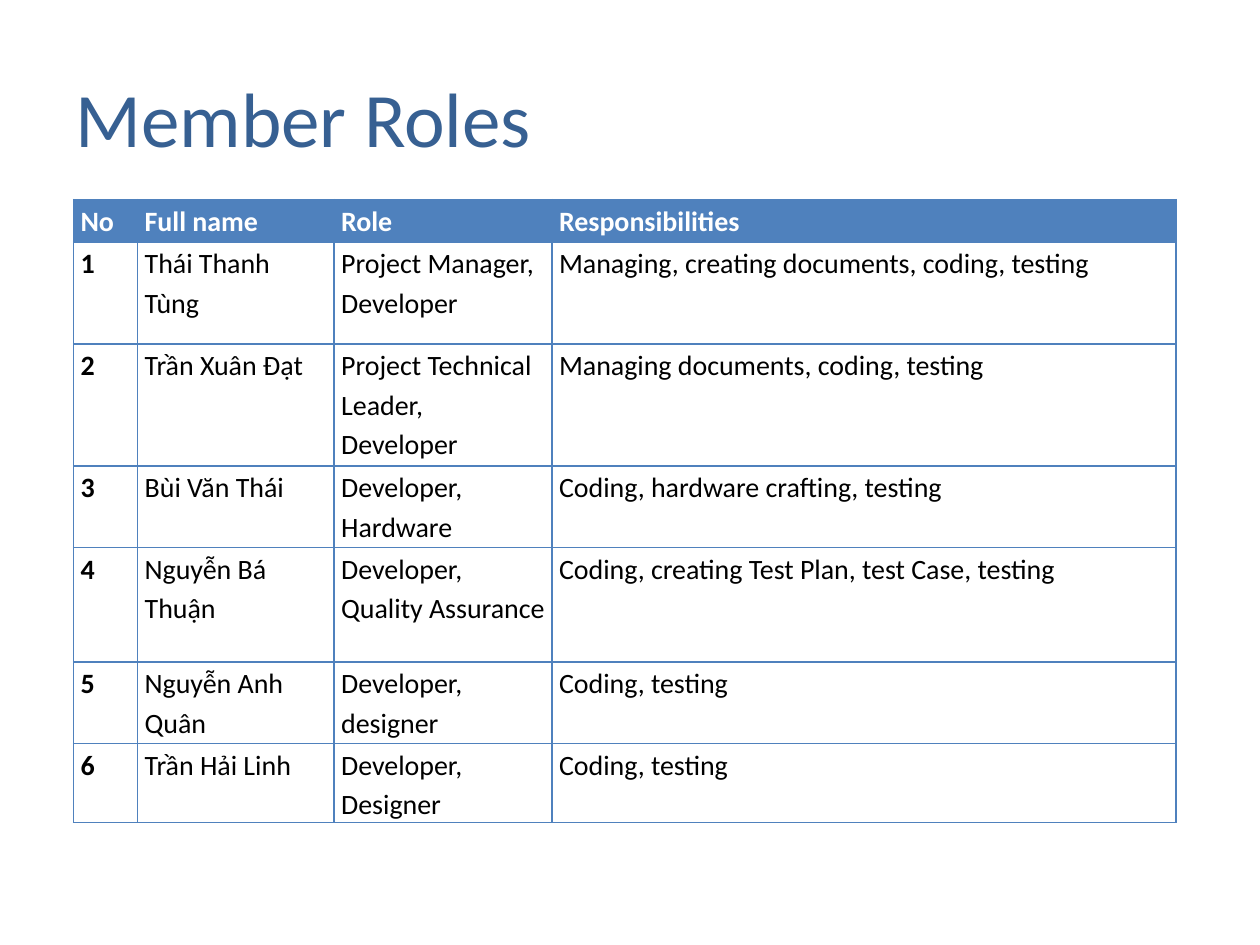
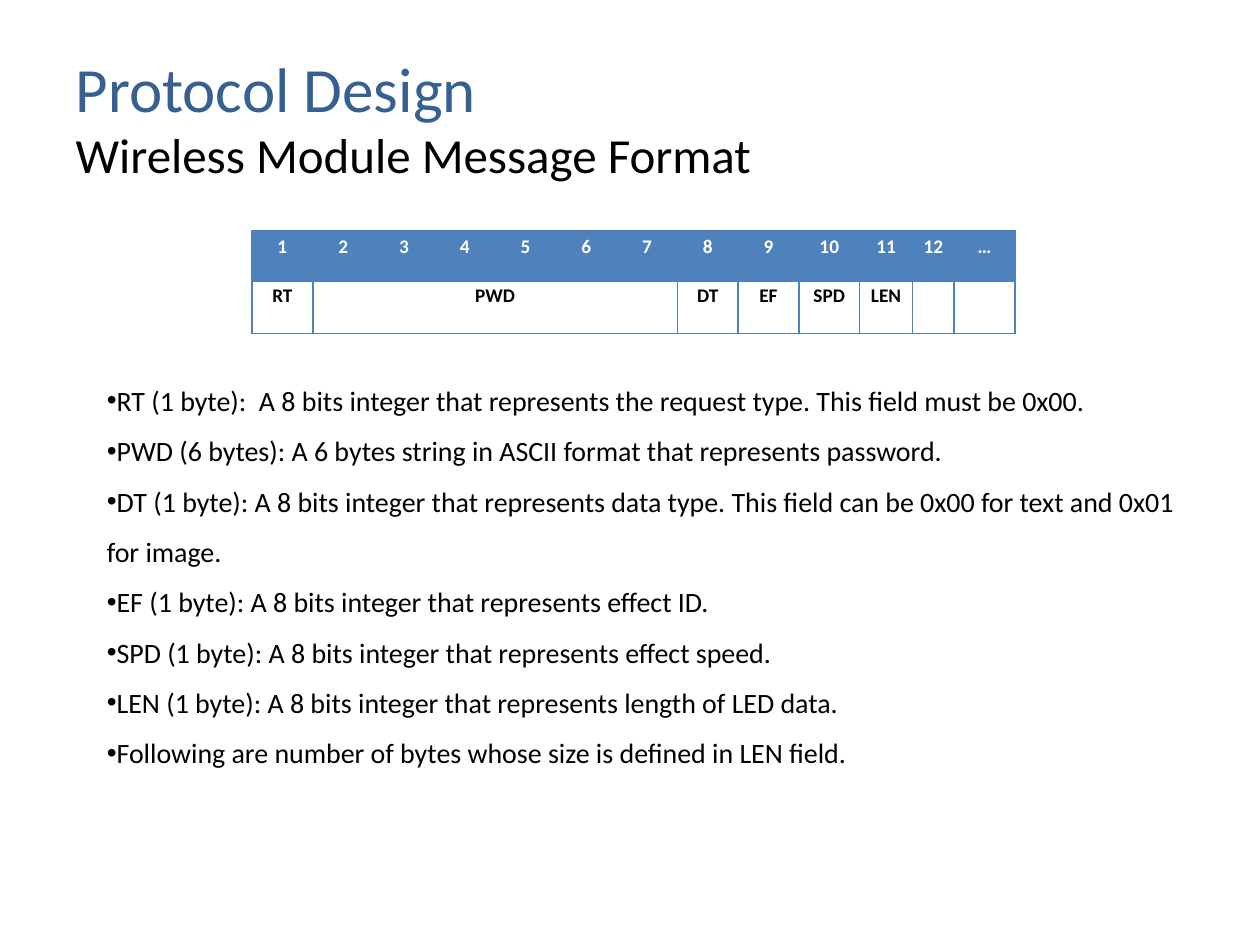
"""Build two project slides: the member roles and the wireless message format."""
from lxml import etree
from pptx import Presentation
from pptx import util as u
from pptx.dml import color
from pptx.enum import text
from pptx.oxml import ns

COLORS = {"title": "376092", "accent": "4F81BD", "ink": "000000", "paper": "FFFFFF"}
FONT = "Calibri"
TITLE_ONLY = 5
TITLE_BOX = (36, 21.6, 648, 90)

ROLE_COLUMNS = [36.7, 112.3, 124.5, 356.5]
ROLE_ROWS = [24.4, 58.2, 69.7, 46.6, 65.5, 46.6, 45.2]
ROLES = [
    ["No", "Full name", "Role", "Responsibilities"],
    ["1", "Thái Thanh Tùng", "Project Manager, Developer",
     "Managing, creating documents, coding, testing"],
    ["2", "Trần Xuân Đạt", "Project Technical Leader, Developer",
     "Managing documents, coding, testing"],
    ["3", "Bùi Văn Thái", "Developer, Hardware", "Coding, hardware crafting, testing"],
    ["4", "Nguyễn Bá Thuận", "Developer, Quality Assurance",
     "Coding, creating Test Plan, test Case, testing"],
    ["5", "Nguyễn Anh Quân", "Developer, designer", "Coding, testing"],
    ["6", "Trần Hải Linh", "Developer, Designer", "Coding, testing"],
]

BYTE_COLUMNS = [34.75] * 10 + [30.2, 23.8, 34.75]
BYTE_ROWS = [28.5, 30.2]
MESSAGE = [
    [str(number) for number in range(1, 13)] + ["…"],
    ["RT", "PWD"] + [""] * 5 + ["DT", "EF", "SPD", "LEN", "", ""],
]
PASSWORD_BYTES = (1, 6)

FIELDS = [
    "RT (1 byte):  A 8 bits integer that represents the request type. This field must be 0x00.",
    "PWD (6 bytes): A 6 bytes string in ASCII format that represents password.",
    "DT (1 byte): A 8 bits integer that represents data type. "
    "This field can be 0x00 for text and 0x01 for image.",
    "EF (1 byte): A 8 bits integer that represents effect ID.",
    "SPD (1 byte): A 8 bits integer that represents effect speed.",
    "LEN (1 byte): A 8 bits integer that represents length of LED data.",
    "Following are number of bytes whose size is defined in LEN field.",
]


def assign(target, values):
    """Set every attribute named in values on the target."""
    for name, value in values.items():
        setattr(target, name, value)


def points(lengths):
    """Convert plain numbers to point lengths."""
    return [u.Pt(length) for length in lengths]


def add_run(paragraph, content, size, ink, bold=False):
    """Append one formatted run to a paragraph."""
    run = paragraph.add_run()
    run.text = content
    assign(run.font, {"name": FONT, "size": u.Pt(size), "bold": bold})
    run.font.color.rgb = color.RGBColor.from_string(COLORS[ink])


def add_titled_slide(presentation, heading, size, subheading=None):
    """Add a slide with a left-aligned title and an optional second line."""
    slide = presentation.slides.add_slide(presentation.slide_layouts[TITLE_ONLY])
    title = slide.shapes.title
    assign(title, dict(zip(("left", "top", "width", "height"), points(TITLE_BOX))))
    assign(title.text_frame, {"vertical_anchor": text.MSO_ANCHOR.MIDDLE,
                              "auto_size": text.MSO_AUTO_SIZE.NONE})
    paragraph = title.text_frame.paragraphs[0]
    paragraph.alignment = text.PP_ALIGN.LEFT
    add_run(paragraph, heading, size, "title")
    if subheading:
        paragraph.add_line_break()
        add_run(paragraph, subheading, 28, "ink")
    return slide


def add_borders(cell):
    """Draw a one point accent line on all four sides of a cell."""
    properties = cell._tc.get_or_add_tcPr()
    for side in ("lnL", "lnR", "lnT", "lnB"):
        line = etree.SubElement(properties, ns.qn(f"a:{side}"), w=str(u.Pt(1)))
        fill = etree.SubElement(line, ns.qn("a:solidFill"))
        etree.SubElement(fill, ns.qn("a:srgbClr"), val=COLORS["accent"])


def format_cell(cell, content, is_header, size, bold, margin, alignment):
    """Give a cell its borders, fill, margins and text."""
    add_borders(cell)
    assign(cell, {"margin_left": u.Pt(margin), "margin_right": u.Pt(margin),
                  "margin_top": 0, "margin_bottom": 0})
    if is_header:
        cell.fill.solid()
        cell.fill.fore_color.rgb = color.RGBColor.from_string(COLORS["accent"])
    else:
        cell.fill.background()
    if content:
        paragraph = cell.text_frame.paragraphs[0]
        assign(paragraph, {"line_spacing": 1.15, "space_after": u.Pt(10),
                           "alignment": alignment})
        add_run(paragraph, content, size, "paper" if is_header else "ink", bold)


def add_grid(slide, left, top, widths, heights, rows, size, margin,
             alignment=text.PP_ALIGN.LEFT, all_bold=False):
    """Add a table with a filled header row and return it."""
    frame = slide.shapes.add_table(len(rows), len(widths),
                                   *points((left, top, sum(widths), sum(heights))))
    table = frame.table
    table.horz_banding = False
    for column, width in zip(table.columns, points(widths)):
        column.width = width
    for row, height in zip(table.rows, points(heights)):
        row.height = height
    for row_index, row in enumerate(rows):
        for column_index, content in enumerate(row):
            bold = all_bold or row_index == 0 or column_index == 0
            format_cell(table.cell(row_index, column_index), content,
                        row_index == 0, size, bold, margin, alignment)
    return table


def add_bullets(slide, box, items):
    """Add a text box with one bulleted paragraph for each item."""
    frame = slide.shapes.add_textbox(*points(box)).text_frame
    assign(frame, {"word_wrap": True, "auto_size": text.MSO_AUTO_SIZE.SHAPE_TO_FIT_TEXT})
    for index, item in enumerate(items):
        paragraph = frame.add_paragraph() if index else frame.paragraphs[0]
        paragraph.line_spacing = 1.5
        properties = paragraph._p.get_or_add_pPr()
        etree.SubElement(properties, ns.qn("a:buFont"), typeface="Arial")
        etree.SubElement(properties, ns.qn("a:buChar"), char="•")
        add_run(paragraph, item, 16, "ink")


def add_member_roles(presentation):
    """Add the slide that lists the members and their duties."""
    slide = add_titled_slide(presentation, "Member Roles", 44)
    add_grid(slide, 42, 114, ROLE_COLUMNS, ROLE_ROWS, ROLES, 16, 4)


def add_protocol_design(presentation):
    """Add the slide that explains the message bytes."""
    slide = add_titled_slide(presentation, "Protocol Design", 36,
                             "Wireless Module Message Format")
    table = add_grid(slide, 144, 132, BYTE_COLUMNS, BYTE_ROWS, MESSAGE, 11, 5,
                     text.PP_ALIGN.CENTER, all_bold=True)
    first, last = PASSWORD_BYTES
    table.cell(1, first).merge(table.cell(1, last))
    add_bullets(slide, (54, 206, 630, 243.4), FIELDS)


def main():
    """Build and save the presentation."""
    presentation = Presentation()
    assign(presentation, {"slide_width": u.Pt(720), "slide_height": u.Pt(540)})
    add_member_roles(presentation)
    add_protocol_design(presentation)
    presentation.save("out.pptx")


if __name__ == "__main__":
    main()
